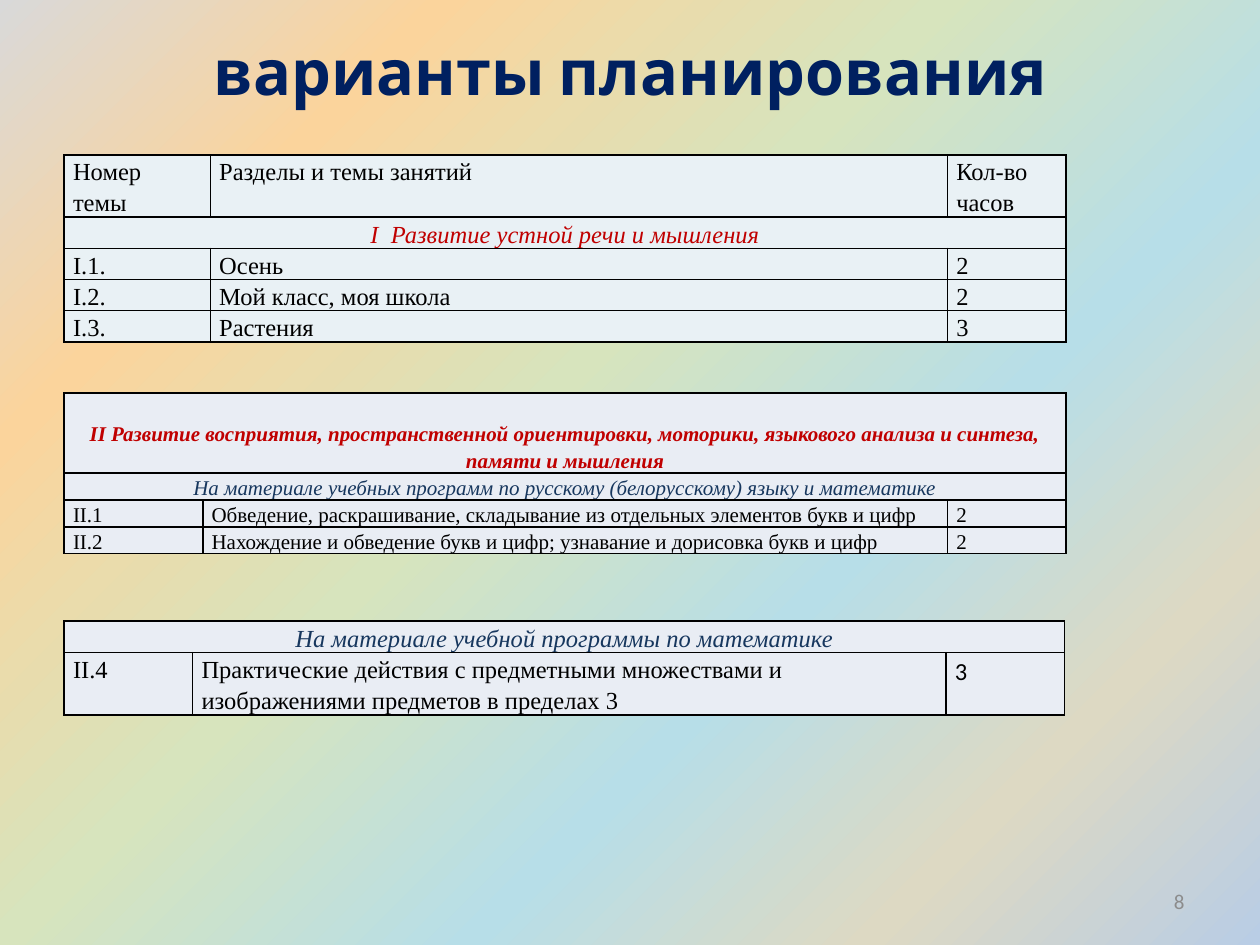
import lxml.etree
import pptx
import pptx.dml.color
import pptx.enum.text
import pptx.oxml
import pptx.util

Inches = pptx.util.Inches
ALIGN = pptx.enum.text.PP_ALIGN
MIDDLE = pptx.enum.text.MSO_ANCHOR.MIDDLE
NAMESPACE = 'xmlns:a="http://schemas.openxmlformats.org/drawingml/2006/main"'
SERIF = "Times New Roman"

COLORS = {
    "title": "002060", "text": "000000", "section": "C00000", "subsection": "17375E",
    "number": "8C8C8C", "border": "000000", "pale": "E9F1F5", "lilac": "E9EDF4",
}
BACKGROUND = [(0, "B9CDE5"), (18, "DDD9C3"), (36, "B7DEE8"),
              (57, "D7E4BD"), (80, "FBD49C"), (100, "D9D9D9")]

TITLE = "варианты планирования"
PAGE_NUMBER = "8"
SECTION = {"color": "section", "italic": True}
SUBSECTION = {"color": "subsection", "italic": True}

TABLES = [
    {
        "top": 1.23, "height": 1.61, "columns": [1.16, 5.85, 0.94],
        "row_heights": [0.2, 0.09, 0.09, 0.09, 0.09], "size": 14, "fill": "pale",
        "rows": [
            ["Номер\nтемы", "Разделы и темы занятий", "Кол-во\nчасов"],
            ("I  Развитие устной речи и мышления", SECTION),
            ["I.1.", "Осень", "2"],
            ["I.2.", "Мой класс, моя школа", "2"],
            ["I.3.", "Растения", "3"],
        ],
    },
    {
        "top": 3.12, "height": 1.38, "columns": [1.1, 5.91, 0.94],
        "row_heights": [0.2] * 4, "size": 12, "fill": "lilac", "first_margin": 0.21,
        "rows": [
            ("II Развитие восприятия, пространственной ориентировки, моторики, "
             "языкового анализа и синтеза, памяти и мышления", {**SECTION, "bold": True}),
            ("На материале учебных программ по русскому (белорусскому) языку и математике",
             SUBSECTION),
            ["II.1", "Обведение, раскрашивание, складывание из отдельных элементов букв и цифр", "2"],
            ["II.2", "Нахождение и обведение букв и цифр; узнавание и дорисовка букв и цифр", "2"],
        ],
    },
    {
        "top": 4.93, "height": 0.81, "columns": [1.02, 5.98, 0.94],
        "row_heights": [0.25, 0.2], "size": 14, "fill": "lilac", "last_font": "Calibri",
        "rows": [
            ("На материале учебной программы по математике", SUBSECTION),
            ["II.4", "Практические действия с предметными множествами и изображениями "
                     "предметов в пределах 3", "3"],
        ],
    },
]


def rgb(name):
    return pptx.dml.color.RGBColor.from_string(COLORS[name])


def write_text(frame, text, size, font=SERIF, color="text", bold=False, italic=False,
               align=ALIGN.LEFT, line_spacing=None):
    for index, line in enumerate(text.split("\n")):
        paragraph = frame.add_paragraph() if index else frame.paragraphs[0]
        paragraph.alignment = align
        paragraph.line_spacing = line_spacing
        run = paragraph.add_run()
        run.text = line
        run.font.size = pptx.util.Pt(size)
        run.font.name = font
        run.font.color.rgb = rgb(color)
        run.font.bold = bold
        run.font.italic = italic


def style_cell(cell, fill):
    cell.margin_left = cell.margin_right = Inches(0.07)
    cell.margin_top = cell.margin_bottom = 0
    properties = cell._tc.get_or_add_tcPr()
    for side in ("lnL", "lnR", "lnT", "lnB"):
        properties.append(pptx.oxml.parse_xml(
            f'<a:{side} {NAMESPACE} w="12700"><a:solidFill>'
            f'<a:srgbClr val="{COLORS["border"]}"/></a:solidFill></a:{side}>'))
    cell.fill.solid()
    cell.fill.fore_color.rgb = rgb(fill)


def add_plan_table(slide, plan):
    rows, columns = plan["rows"], plan["columns"]
    frame = slide.shapes.add_table(len(rows), len(columns), Inches(0.51), Inches(plan["top"]),
                                   Inches(sum(columns)), Inches(plan["height"]))
    table = frame.table
    table.first_row = table.horz_banding = False
    for column, width in zip(table.columns, columns):
        column.width = Inches(width)
    for row, height in zip(table.rows, plan["row_heights"]):
        row.height = Inches(height)
    frame.height = Inches(plan["height"])
    for cell in table.iter_cells():
        style_cell(cell, plan["fill"])
    for index, content in enumerate(rows):
        if isinstance(content, tuple):
            heading, style = content
            cell = table.cell(index, 0)
            cell.merge(table.cell(index, len(columns) - 1))
            write_text(cell.text_frame, heading, plan["size"], align=ALIGN.CENTER,
                       line_spacing=1.15, **style)
            continue
        fonts = [SERIF, SERIF, plan.get("last_font", SERIF)]
        for position, (text, font) in enumerate(zip(content, fonts)):
            write_text(table.cell(index, position).text_frame, text, plan["size"],
                       font=font, line_spacing=1.15)
    table.cell(0, 0).margin_top = Inches(plan.get("first_margin", 0))


def paint_background(slide):
    slide.background.fill.gradient()
    gradient = slide.element.xpath("./p:cSld/p:bg/p:bgPr/a:gradFill")[0]
    stops = "".join(f'<a:gs pos="{position * 1000}"><a:srgbClr val="{color}"/></a:gs>'
                    for position, color in BACKGROUND)
    gradient.getparent().replace(gradient, pptx.oxml.parse_xml(
        f'<a:gradFill {NAMESPACE} rotWithShape="1"><a:gsLst>{stops}</a:gsLst>'
        '<a:path path="circle"><a:fillToRect l="100000" t="100000"/></a:path>'
        '<a:tileRect r="-100000" b="-100000"/></a:gradFill>'))


def main():
    presentation = pptx.Presentation()
    presentation.slide_width, presentation.slide_height = Inches(10), Inches(7.5)
    slide = presentation.slides.add_slide(presentation.slide_layouts[5])
    paint_background(slide)

    title = slide.shapes.title
    title.left, title.top = Inches(0.28), Inches(0.13)
    title.width, title.height = Inches(9.45), Inches(0.85)
    title.text_frame.vertical_anchor = MIDDLE
    write_text(title.text_frame, TITLE, 36, font="Cabin", color="title", bold=True,
               align=ALIGN.CENTER)

    for plan in TABLES:
        add_plan_table(slide, plan)

    number = slide.shapes.add_textbox(Inches(7.17), Inches(6.95), Inches(2.33), Inches(0.4))
    number.text_frame.word_wrap = True
    number.text_frame.vertical_anchor = MIDDLE
    write_text(number.text_frame, PAGE_NUMBER, 12, font="Calibri", color="number",
               align=ALIGN.RIGHT)
    presentation.save("out.pptx")


if __name__ == "__main__":
    main()
